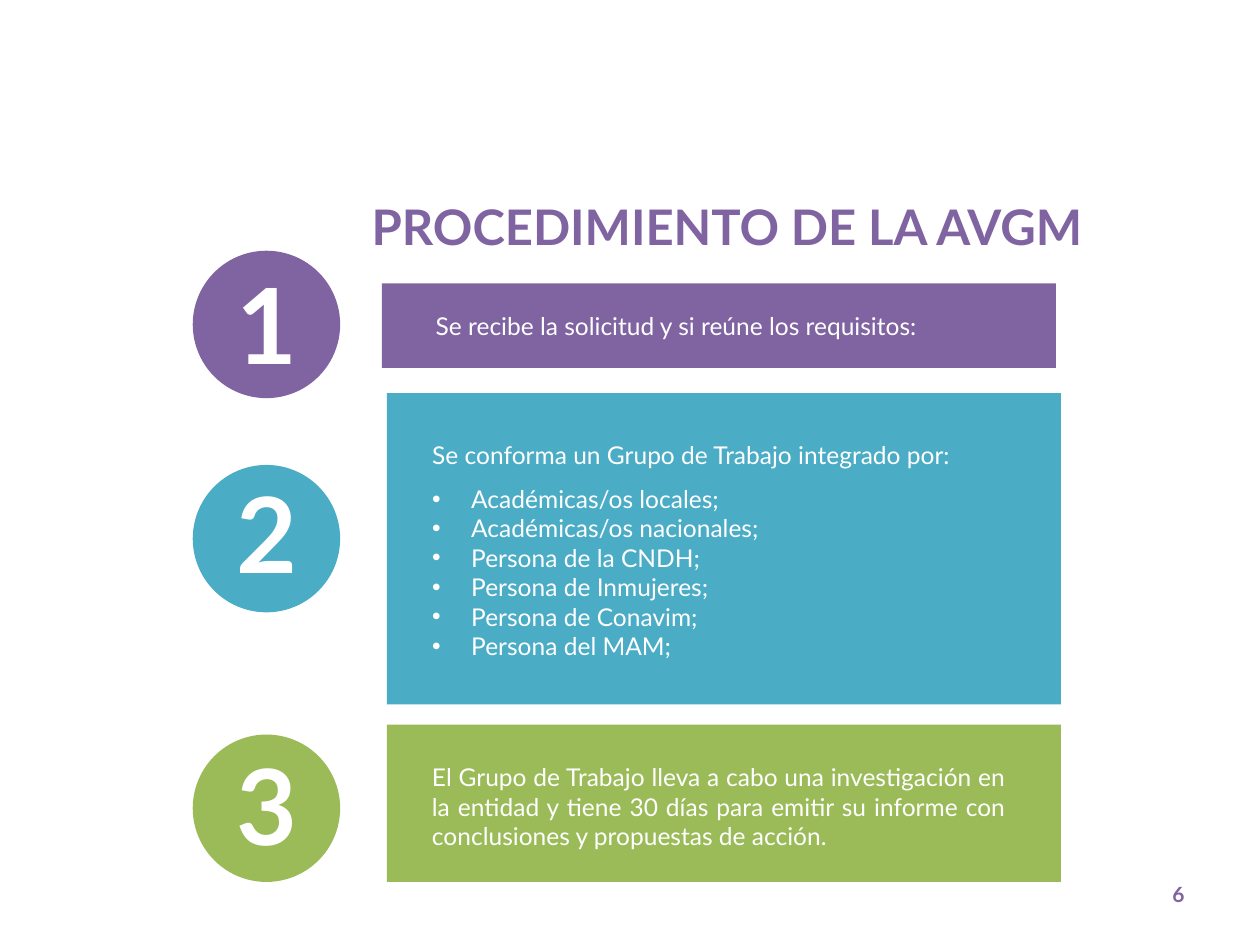
from lxml.etree import SubElement
from pptx import Presentation
from pptx.dml.color import RGBColor
from pptx.enum.shapes import MSO_SHAPE as Preset
from pptx.enum.text import MSO_ANCHOR as Anchor, MSO_AUTO_SIZE as AutoSize, PP_ALIGN as Align
from pptx.oxml.ns import qn
from pptx.util import Inches, Pt

FONT = "Lato"
PURPLE, TEAL, GREEN, WHITE = "8064A2", "4BACC6", "9BBB59", "FFFFFF"
CIRCLE_LEFT, CIRCLE_SIZE = 1.53, 1.17
NUMBER_LEFT, NUMBER_WIDTH, NUMBER_HEIGHT = 1.78, 0.68, 1.11
BULLET_INDENT = 0.31

# number, colour, circle top, number top, panel (left, top, width, height)
STEPS = [
    ("1", PURPLE, 1.99, 2.01, (3.03, 2.25, 5.35, 0.67)),
    ("2", TEAL, 3.69, 3.67, (3.07, 3.12, 5.35, 2.47)),
    ("3", GREEN, 5.83, 5.83, (3.07, 5.75, 5.35, 1.25)),
]
GROUP_INTRO = "Se conforma un Grupo de Trabajo integrado por:"
GROUP_MEMBERS = [
    "Académicas/os locales;",
    "Académicas/os nacionales;",
    "Persona de la CNDH;",
    "Persona de Inmujeres;",
    "Persona de Conavim;",
    "Persona del MAM;",
]


def color(hex_value):
    return RGBColor.from_string(hex_value)


def place(shape, left, top, width, height):
    shape.left, shape.top = Inches(left), Inches(top)
    shape.width, shape.height = Inches(width), Inches(height)


def add_filled(slide, preset, box, fill):
    shape = slide.shapes.add_shape(preset, *map(Inches, box))
    shape.shadow.inherit = False
    shape.fill.solid()
    shape.fill.fore_color.rgb = color(fill)
    shape.line.fill.background()


def prepare_frame(shape):
    frame = shape.text_frame
    frame.word_wrap = True
    frame.auto_size = AutoSize.NONE
    frame.vertical_anchor = Anchor.TOP
    return frame


def set_bullet(paragraph, bullet):
    properties = paragraph._p.get_or_add_pPr()
    indent = Inches(BULLET_INDENT) if bullet else 0
    properties.set("marL", str(indent))
    properties.set("indent", str(-indent))
    if bullet:
        SubElement(properties, qn("a:buFont"), typeface="Arial")
        SubElement(properties, qn("a:buChar"), char="•")
    else:
        SubElement(properties, qn("a:buNone"))


def write(paragraph, text, size=14, fill=WHITE, bold=False, align=Align.LEFT, before=0):
    paragraph.alignment = align
    paragraph.space_before = Pt(before)
    run = paragraph.add_run()
    run.text = text
    run.font.name = FONT
    run.font.size = Pt(size)
    run.font.bold = bold
    run.font.color.rgb = color(fill)


def add_text(slide, box, text, **text_format):
    shape = slide.shapes.add_textbox(*map(Inches, box))
    write(prepare_frame(shape).paragraphs[0], text, **text_format)


def fill_title(title):
    place(title, 2.85, 1.51, 6.5, 0.57)
    write(prepare_frame(title).paragraphs[0], "PROCEDIMIENTO DE LA AVGM",
          size=28, fill=PURPLE, bold=True)


def fill_group_list(body):
    place(body, 3.33, 3.44, 5.08, 1.9)
    frame = prepare_frame(body)
    set_bullet(frame.paragraphs[0], False)
    write(frame.paragraphs[0], GROUP_INTRO)
    for index, member in enumerate(GROUP_MEMBERS):
        paragraph = frame.add_paragraph()
        set_bullet(paragraph, True)
        write(paragraph, member, before=0 if index else 8.4)


def bring_to_front(shape):
    shape._element.getparent().append(shape._element)


def main():
    presentation = Presentation()
    presentation.slide_width, presentation.slide_height = Inches(10), Inches(7.5)
    slide = presentation.slides.add_slide(presentation.slide_layouts[1])
    title, body = slide.shapes.title, slide.placeholders[1]

    # Panels and numbered circles
    for number, fill, circle_top, number_top, panel in STEPS:
        add_filled(slide, Preset.RECTANGLE, panel, fill)
        circle = (CIRCLE_LEFT, circle_top, CIRCLE_SIZE, CIRCLE_SIZE)
        add_filled(slide, Preset.OVAL, circle, fill)
        add_text(slide, (NUMBER_LEFT, number_top, NUMBER_WIDTH, NUMBER_HEIGHT), number,
                 size=60, bold=True, align=Align.CENTER)

    # Step descriptions
    add_text(slide, (3.36, 2.42, 4.9, 0.34),
             "Se recibe la solicitud y si reúne los requisitos:")
    fill_group_list(body)
    bring_to_front(body)
    add_text(slide, (3.33, 6, 4.75, 0.81),
             "El Grupo de Trabajo lleva a cabo una investigación en la entidad y tiene "
             "30 días para emitir su informe con conclusiones y propuestas de acción.",
             align=Align.JUSTIFY)

    # Title and page number
    fill_title(title)
    bring_to_front(title)
    add_text(slide, (7.17, 6.95, 2.33, 0.4), "6",
             size=12, fill=PURPLE, bold=True, align=Align.RIGHT)

    presentation.save("out.pptx")


if __name__ == "__main__":
    main()
